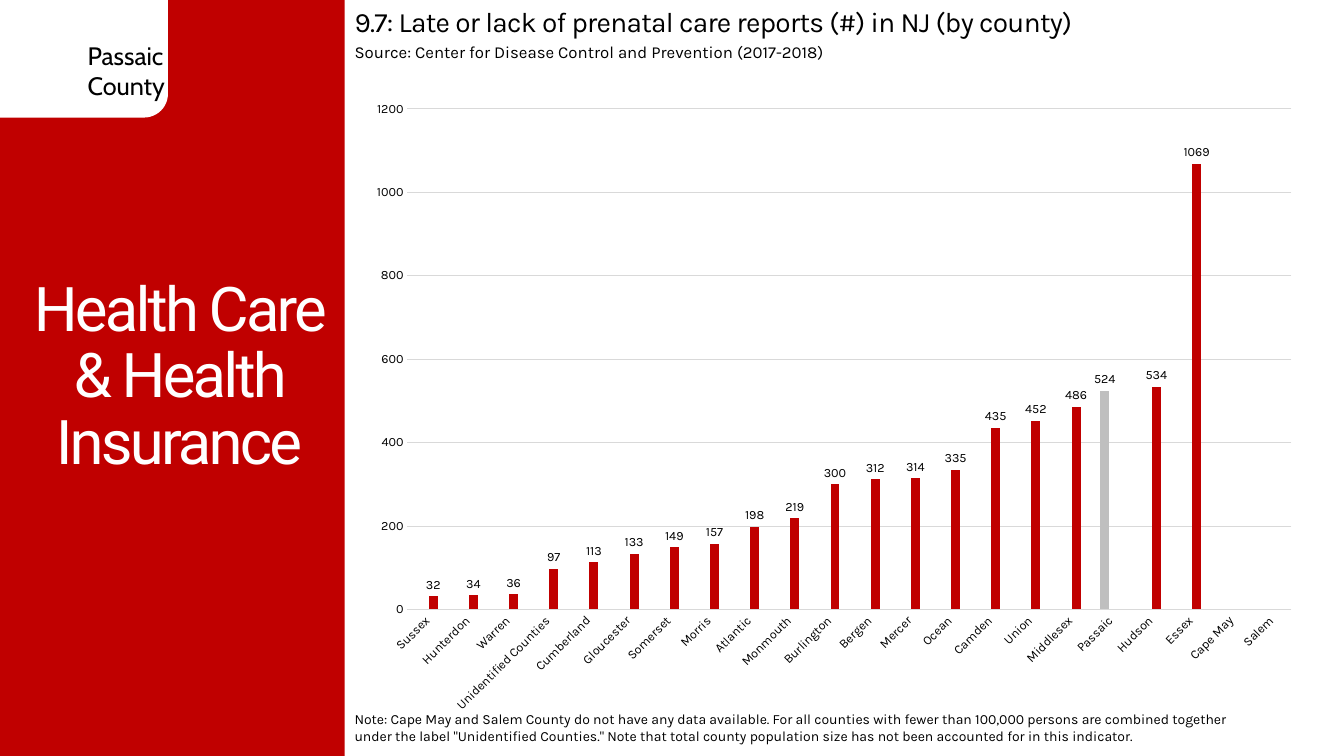
import pptx
import pptx.chart.data
import pptx.dml.color
import pptx.enum.chart
import pptx.enum.shapes
import pptx.enum.text
import pptx.util
from pptx.util import Pt

# Content
SECTION = "Health Care & Health Insurance"
TAG = "Passaic\nCounty"
HEADING = "9.7: Late or lack of prenatal care reports (#) in NJ (by county)"
SOURCE = "Source: Center for Disease Control and Prevention (2017-2018)"
NOTE = (
    "Note: Cape May and Salem County do not have any data available. "
    "For all counties with fewer than 100,000 persons are combined together "
    'under the label "Unidentified Counties." Note that total county '
    "population size has not been accounted for in this indicator."
)
REPORTS = {
    "Sussex": 32, "Hunterdon": 34, "Warren": 36, "Unidentified Counties": 97,
    "Cumberland": 113, "Gloucester": 133, "Somerset": 149, "Morris": 157,
    "Atlantic": 198, "Monmouth": 219, "Burlington": 300, "Bergen": 312,
    "Mercer": 314, "Ocean": 335, "Camden": 435, "Union": 452,
    "Middlesex": 486, "Passaic": 524, "Hudson": 534, "Essex": 1069,
    "Cape May": None, "Salem": None,
}
HIGHLIGHT = "Passaic"

RED, GRAY, GRID, BLACK, WHITE = "C00000", "BFBFBF", "D9D9D9", "000000", "FFFFFF"
PANEL_WIDTH = 246.2


def color(value):
    return pptx.dml.color.RGBColor.from_string(value)


def set_font(font, name, size, value):
    font.name = name
    font.size = Pt(size)
    font.color.rgb = color(value)


def add_block(kind, left, top, width, height, fill):
    shape = slide.shapes.add_shape(kind, Pt(left), Pt(top), Pt(width), Pt(height))
    shape.shadow.inherit = False
    shape.fill.solid()
    shape.fill.fore_color.rgb = color(fill)
    shape.line.fill.background()


def format_text(shape, text, name, size, value, spacing=0):
    frame = shape.text_frame
    frame.text = text
    frame.word_wrap = True
    for paragraph in frame.paragraphs:
        for run in paragraph.runs:
            set_font(run.font, name, size, value)
            if spacing:
                run.font._element.set("spc", str(round(spacing * 100)))


def add_text(left, top, width, height, *style):
    shape = slide.shapes.add_textbox(Pt(left), Pt(top), Pt(width), Pt(height))
    format_text(shape, *style)


presentation = pptx.Presentation()
presentation.slide_width = Pt(960)
presentation.slide_height = Pt(540)
slide = presentation.slides.add_slide(presentation.slide_layouts[5])

# Left panel and county tag
shapes = pptx.enum.shapes.MSO_SHAPE
add_block(shapes.RECTANGLE, 0, 0, PANEL_WIDTH, 540, RED)
add_block(shapes.ROUNDED_RECTANGLE, -24, -18, 144, 102, WHITE)
add_text(55.5, 25.2, 72, 51, TAG, "Cabin", 18, BLACK)

# Section title, brought in front of the panel
title = slide.shapes.title
title.left, title.top, title.width, title.height = Pt(0), Pt(54), Pt(255.6), Pt(432)
format_text(title, SECTION, "Roboto", 44, WHITE, -2)
title.text_frame.auto_size = pptx.enum.text.MSO_AUTO_SIZE.NONE
title.text_frame.vertical_anchor = pptx.enum.text.MSO_ANCHOR.MIDDLE
title.text_frame.paragraphs[0].alignment = pptx.enum.text.PP_ALIGN.CENTER
title.text_frame.paragraphs[0].line_spacing = 0.9
slide.shapes._spTree.append(title._element)

# Heading, source and note
add_text(PANEL_WIDTH, 0, 710, 31.5, HEADING, "Karla", 20, BLACK, -0.5)
add_text(PANEL_WIDTH, 26, 662, 21.8, SOURCE, "Karla", 12, BLACK)
add_text(PANEL_WIDTH, 504, 662, 31.5, NOTE, "Karla", 10, BLACK)

# Chart data: the highlighted county has a series of its own
chart_data = pptx.chart.data.CategoryChartData()
chart_data.categories = list(REPORTS)
for series_name, highlighted in (("Series 1", True), ("Series 2", False)):
    chart_data.add_series(series_name, [
        value if (county == HIGHLIGHT) == highlighted else None
        for county, value in REPORTS.items()
    ])
chart = slide.shapes.add_chart(
    pptx.enum.chart.XL_CHART_TYPE.COLUMN_CLUSTERED,
    Pt(255.6), Pt(63.4), Pt(680.4), Pt(455), chart_data,
).chart
chart.has_legend = False
chart.has_title = False
set_font(chart.font, "Calibri", 10, BLACK)

# Columns and labels
plot = chart.plots[0]
plot.gap_width = 219
plot.overlap = -27
plot.vary_by_categories = False
for series, fill in zip(plot.series, (GRAY, RED)):
    series.format.fill.solid()
    series.format.fill.fore_color.rgb = color(fill)
    series.invert_if_negative = False
    labels = series.data_labels
    labels.show_value = True
    labels.position = pptx.enum.chart.XL_LABEL_POSITION.OUTSIDE_END
    set_font(labels.font, "Karla", 9, BLACK)

# Axes
category_axis, value_axis = chart.category_axis, chart.value_axis
for axis in (category_axis, value_axis):
    axis.major_tick_mark = pptx.enum.chart.XL_TICK_MARK.NONE
    axis.minor_tick_mark = pptx.enum.chart.XL_TICK_MARK.NONE
    set_font(axis.tick_labels.font, "Karla", 9, BLACK)
category_axis.has_major_gridlines = False
category_axis._element.txPr.bodyPr.set("rot", str(-45 * 60000))
value_axis.minimum_scale = 0
value_axis.maximum_scale = 1200
value_axis.major_unit = 200
value_axis.has_major_gridlines = True
value_axis.format.line.fill.background()
for line in (category_axis.format.line, value_axis.major_gridlines.format.line):
    line.color.rgb = color(GRID)
    line.width = Pt(0.75)

presentation.save("out.pptx")
